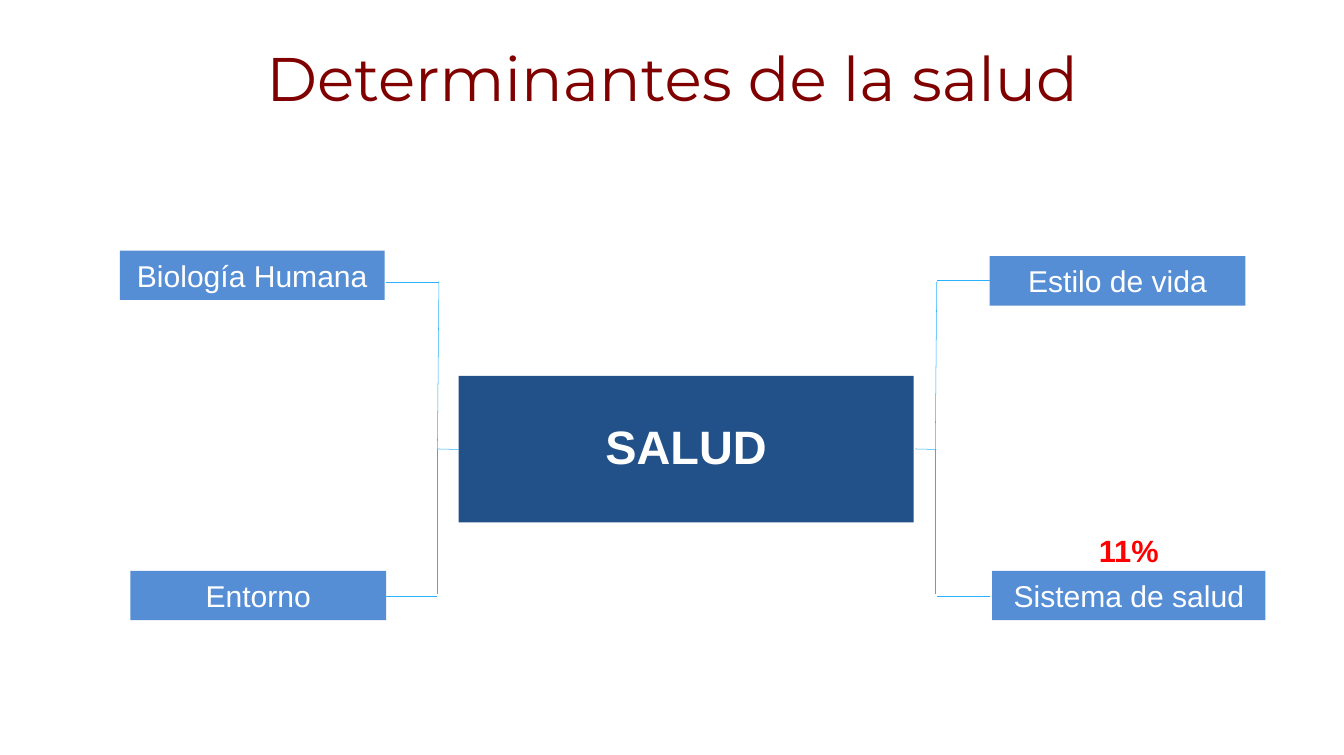
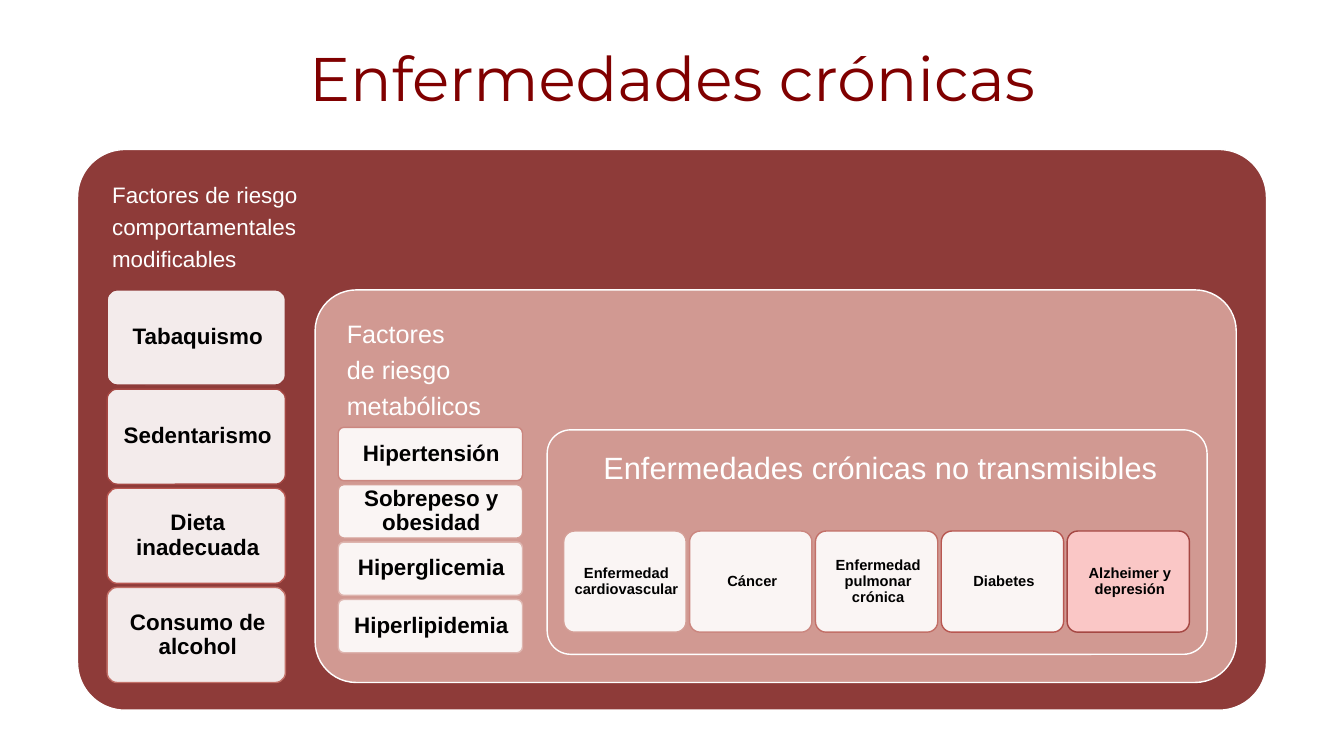
from dataclasses import dataclass

from lxml import etree
from pptx import Presentation
from pptx.dml.color import RGBColor
from pptx.enum.shapes import MSO_CONNECTOR, MSO_SHAPE
from pptx.enum.text import MSO_ANCHOR, MSO_AUTO_SIZE, PP_ALIGN
from pptx.oxml.ns import qn
from pptx.util import Emu, Pt

PX = 9144  # 100 px to the inch
RECT, ROUNDED = MSO_SHAPE.RECTANGLE, MSO_SHAPE.ROUNDED_RECTANGLE
STRAIGHT = MSO_CONNECTOR.STRAIGHT
LEFT, CENTER = PP_ALIGN.LEFT, PP_ALIGN.CENTER
TOP, MIDDLE = MSO_ANCHOR.TOP, MSO_ANCHOR.MIDDLE
NO_AUTOFIT = MSO_AUTO_SIZE.NONE
TITLE_ONLY = 5


@dataclass(frozen=True)
class Theme:
    title_font: str = "Montserrat"
    body_font: str = "Arial"
    title: str = "800000"
    white: str = "FFFFFF"
    black: str = "000000"
    accent: str = "FF0000"
    factor: str = "558ED5"
    core: str = "22518A"
    link: str = "2AB2FC"
    outer: str = "8E3B39"
    inner: str = "D19992"
    highlight: str = "FFCCCC"
    title_size: int = 88
    core_size: int = 67
    heading_size: int = 44
    factor_size: int = 43
    panel_size: int = 36
    card_size: int = 32
    small_size: int = 21
    link_width: float = 0.75
    border_width: int = 2
    card_opacity: int = 90


def set_values(target, values):
    for name, value in values.items():
        setattr(target, name, value)


class Builder:
    """Holds the deck, its theme and the current page."""

    def __init__(self, theme, width, height):
        self.theme = theme
        self.deck = Presentation()
        set_values(self.deck, {"slide_width": Emu(width * PX), "slide_height": Emu(height * PX)})
        self.page = None

    def new_page(self, title):
        theme = self.theme
        self.page = self.deck.slides.add_slide(self.deck.slide_layouts[TITLE_ONLY])
        box = self.page.shapes.title
        places = zip(("left", "top", "width", "height"), (197, 91, 2276, 124))
        set_values(box, {name: Emu(value * PX) for name, value in places})
        self.fill_text(box, [title], theme.title_size, theme.title, font=theme.title_font,
                       insets=(26, 13, 26, 13))

    def fill_text(self, box, lines, size, color, font=None, bold=False, align=CENTER,
                  anchor=MIDDLE, insets=(0, 0, 0, 0), wrap=True, spacing=1.0, after=0):
        frame = box.text_frame
        margins = zip(("margin_left", "margin_top", "margin_right", "margin_bottom"), insets)
        set_values(frame, {name: Emu(value * PX) for name, value in margins})
        set_values(frame, {"auto_size": NO_AUTOFIT, "word_wrap": wrap, "vertical_anchor": anchor})
        for index, line in enumerate(lines):
            para = frame.add_paragraph() if index else frame.paragraphs[0]
            set_values(para, {"alignment": align, "line_spacing": spacing,
                              "space_before": Pt(0), "space_after": Pt(after)})
            span = para.add_run()
            span.text = line
            set_values(span.font, {"name": font or self.theme.body_font, "size": Pt(size),
                                   "bold": bold})
            span.font.color.rgb = RGBColor.from_string(color)

    def block(self, place, fill, kind=RECT, border=None, corner=0.105, opacity=100):
        box = self.page.shapes.add_shape(kind, *(Emu(value * PX) for value in place))
        box.shadow.inherit = False
        box.fill.solid()
        box.fill.fore_color.rgb = RGBColor.from_string(fill)
        if opacity < 100:
            color = box._element.spPr.find(qn("a:solidFill"))[0]
            etree.SubElement(color, qn("a:alpha"), val=str(opacity * 1000))
        if border:
            box.line.width = Pt(self.theme.border_width)
            box.line.color.rgb = RGBColor.from_string(border)
        else:
            box.line.fill.background()
        if kind == ROUNDED:
            box.adjustments[0] = corner
        return box

    def factor(self, text, place):
        self.fill_text(self.block(place, self.theme.factor), [text], self.theme.factor_size,
                       self.theme.white, anchor=TOP, insets=(27, 13, 27, 13))

    def panel(self, lines, place, fill, size, after, insets, align=LEFT, corner=0.105):
        box = self.block(place, fill, ROUNDED, self.theme.white, corner)
        self.fill_text(box, lines, size, self.theme.white, align=align, anchor=TOP,
                       insets=insets, spacing=0.9, after=after)

    def cards(self, items, place, step, size, after, insets):
        """Draw (text, border, fill) cards, each moved on by step."""
        left, top, width, height = place
        for index, (text, border, fill) in enumerate(items):
            spot = (left + index * step[0], top + index * step[1], width, height)
            box = self.block(spot, fill, ROUNDED, border, opacity=self.theme.card_opacity)
            self.fill_text(box, [text], size, self.theme.black, bold=True, insets=insets,
                           spacing=0.9, after=after)

    def label(self, text, place, size, color):
        box = self.page.shapes.add_textbox(*(Emu(value * PX) for value in place))
        self.fill_text(box, [text], size, color, bold=True, align=LEFT, anchor=TOP,
                       insets=(10, 5, 10, 5), wrap=False)

    def link(self, *ends):
        line = self.page.shapes.add_connector(STRAIGHT, *(Emu(value * PX) for value in ends))
        line.line.width = Pt(self.theme.link_width)
        line.line.color.rgb = RGBColor.from_string(self.theme.link)
        etree.SubElement(line._element.spPr, qn("a:effectLst"))


def build_determinants(builder):
    theme = builder.theme
    builder.new_page("Determinantes de la salud")

    # Centre and the four factors
    core = builder.block((911, 747, 904, 291), theme.core)
    builder.fill_text(core, ["SALUD"], theme.core_size, theme.white, bold=True,
                      insets=(60, 0, 60, 0), spacing=0.9, after=23.4)
    for text, left, top, width in (("Biología Humana", 238, 498, 526),
                                   ("Entorno", 259, 1134, 508),
                                   ("Estilo de vida", 1966, 509, 508),
                                   ("Sistema de salud", 1971, 1134, 543)):
        builder.factor(text, (left, top, width, 98))

    # Brackets: spine, upper and lower branch, stub to the centre
    for spine, upper, lower, upper_y, stub in ((869, 767, 764, 561, 869),
                                               (1858, 1861, 1861, 557, 1818)):
        builder.link(spine + 3, 559, spine, 892)
        builder.link(spine, 892, spine, 1180)
        builder.link(upper, upper_y, upper + 105, upper_y)
        builder.link(lower, 1184, lower + 105, 1184)
        builder.link(stub, 892, stub + 42, 893)

    builder.label("11%", (2173, 1051, 139, 83), theme.heading_size, theme.accent)


def build_diseases(builder):
    theme = builder.theme
    builder.new_page("Enfermedades crónicas")

    # Behavioural risk factors
    builder.panel(["Factores de riesgo", "comportamentales", "modificables"],
                  (154, 297, 2362, 1114), theme.outer, theme.card_size, 11.2,
                  (41, 41, 13, 893), corner=0.085)
    builder.cards([("Tabaquismo", "8E3B39", theme.white),
                   ("Sedentarismo", "A54743", theme.white),
                   ("Dieta inadecuada", "B85751", theme.white),
                   ("Consumo de alcohol", "C27068", theme.white)],
                  (213, 576, 354, 189), (0, 197), theme.card_size, 11.2, (19, 19, 13, 19))

    # Metabolic risk factors
    builder.panel(["Factores", "de riesgo", "metabólicos"], (626, 576, 1830, 780),
                  theme.inner, theme.panel_size, 12.6, (39, 39, 15, 519))
    builder.cards([("Hipertensión", "CB8780", theme.white),
                   ("Sobrepeso y obesidad", "D49F97", theme.white),
                   ("Hiperglicemia", "DEB5AF", theme.white),
                   ("Hiperlipidemia", "DEB5AF", theme.white)],
                  (672, 849, 366, 106), (0, 114), theme.card_size, 11.2, (17, 17, 13, 17))

    # Chronic diseases
    builder.panel(["Enfermedades crónicas no transmisibles"], (1087, 854, 1311, 446),
                  theme.inner, theme.heading_size, 15.4, (32, 32, 18, 265), align=CENTER)
    builder.cards([("Enfermedad cardiovascular", "D49F97", theme.white),
                   ("Cáncer", "CB8780", theme.white),
                   ("Enfermedad pulmonar crónica", "C27068", theme.white),
                   ("Diabetes", "B85751", theme.white),
                   ("Alzheimer y depresión", "A54743", theme.highlight)],
                  (1120, 1055, 243, 201), (250, 0), theme.small_size, 7.3, (15, 15, 9, 15))


def main():
    builder = Builder(Theme(), 2670, 1500)
    build_determinants(builder)
    build_diseases(builder)
    builder.deck.save("out.pptx")


if __name__ == "__main__":
    main()
